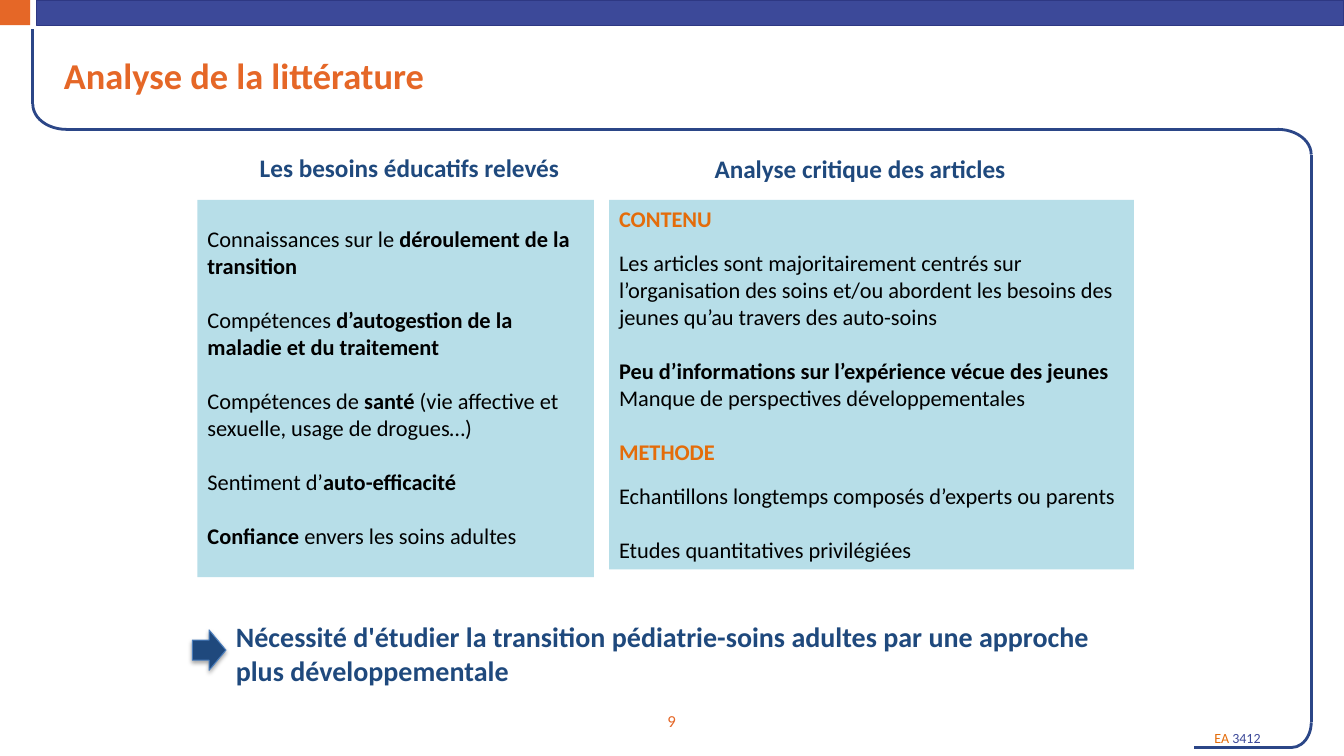
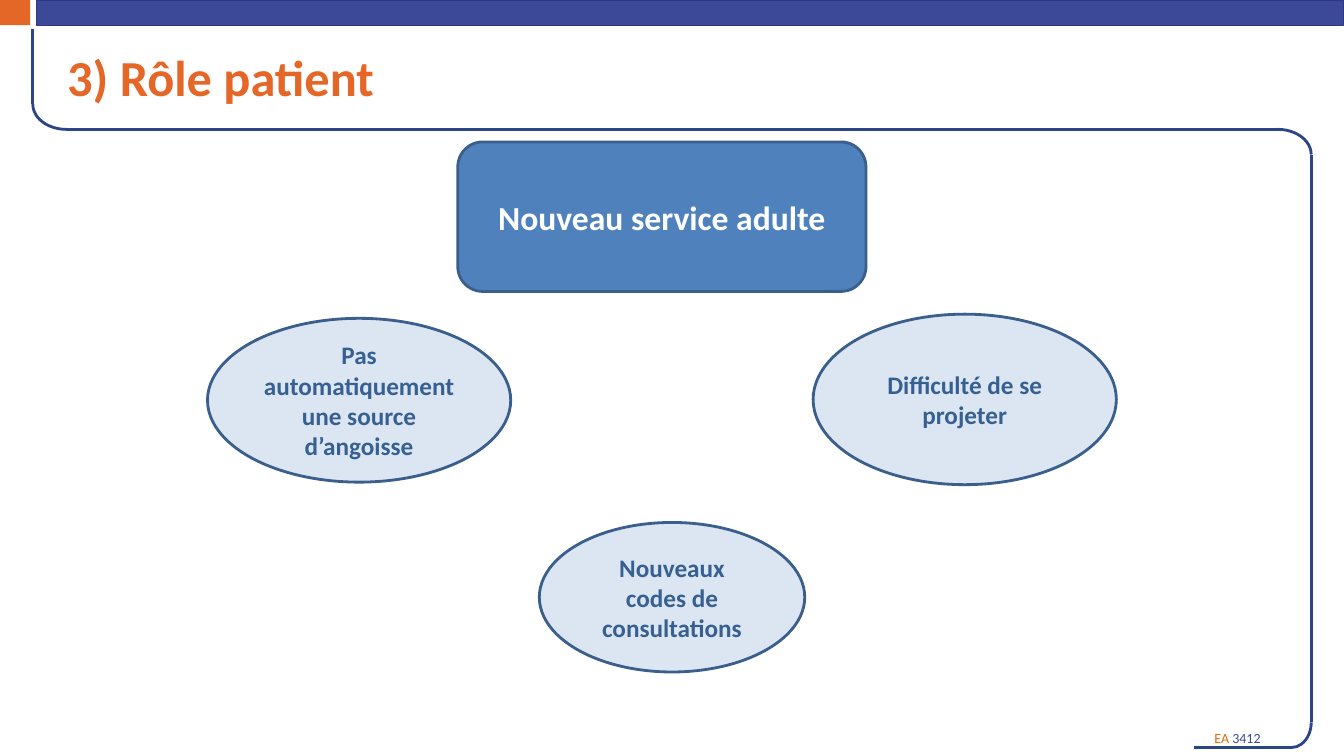
"""Build two slides on the move from child to adult care."""
from dataclasses import dataclass
from typing import Any, NamedTuple

from lxml import etree
from pptx import Presentation
from pptx.dml.color import RGBColor
from pptx.enum.shapes import MSO_CONNECTOR, MSO_SHAPE
from pptx.enum.text import MSO_ANCHOR, MSO_AUTO_SIZE, PP_ALIGN
from pptx.oxml.ns import qn
from pptx.util import Inches, Pt

RECT, ROUND, OVAL = MSO_SHAPE.RECTANGLE, MSO_SHAPE.ROUNDED_RECTANGLE, MSO_SHAPE.OVAL
ARC, ARROW, LINE = MSO_SHAPE.ARC, MSO_SHAPE.RIGHT_ARROW, MSO_CONNECTOR.STRAIGHT
TOP, MIDDLE = MSO_ANCHOR.TOP, MSO_ANCHOR.MIDDLE
LEFT, CENTER = PP_ALIGN.LEFT, PP_ALIGN.CENTER
COLS, ROWS = 160, 90
WIDE, HIGH = Inches(13.33), Inches(7.5)


@dataclass(frozen=True)
class Theme:
    """Colours, type sizes and line widths."""
    font: str = "Calibri"
    orange: str = "E56727"
    amber: str = "E46C0A"
    blue: str = "3C4999"
    edge: str = "2E3883"
    frame: str = "2B4687"
    navy: str = "1F497D"
    panel: str = "B7DEE8"
    pale: str = "DCE6F2"
    steel: str = "4F81BD"
    rim: str = "3A5F8C"
    label: str = "376092"
    glow: str = "4B7EBC"
    black: str = "000000"
    white: str = "FFFFFF"
    tiny: int = 10
    page: int = 12
    body: int = 16
    head: int = 18
    note: int = 20
    lead: int = 24
    title: int = 26
    large: int = 36
    thin: float = 0.75
    thick: float = 2


THEME = Theme()


class Box(NamedTuple):
    """Left, top, width and height in grid cells."""
    x: float
    y: float
    w: float
    h: float


class Run(NamedTuple):
    """A stretch of text with its own look."""
    text: str
    bold: bool | None = None
    color: str | None = None
    edge: str | None = None


class Para(NamedTuple):
    """Runs of one paragraph and the points above it."""
    runs: list[Run]
    gap: float = 0


class Panel(NamedTuple):
    """A headed list on a coloured ground."""
    head: str
    spot: Box
    box: Box
    top: float
    paras: list[Para]


class Bubble(NamedTuple):
    """A labelled shape of the role chart."""
    kind: Any
    box: Box
    text: str
    fill: str = THEME.pale
    color: str = THEME.label
    size: int = THEME.head


GAP, SMALL = 19.5, 12.2
PANELS = [
    Panel("Les besoins éducatifs relevés", Box(26.9, 17.5, 43.7, 4.8),
          Box(23.5, 23.8, 47.2, 44.9), 0.25, [
        Para([Run("Connaissances sur le "), Run("déroulement de la transition", True)]),
        Para([Run("Compétences "),
              Run("d’autogestion de la maladie et du traitement", True)], GAP),
        Para([Run("Compétences de "), Run("santé", True),
              Run(" (vie affective et sexuelle, usage de drogues…)")], GAP),
        Para([Run("Sentiment d’"), Run("auto-efficacité", True)], GAP),
        Para([Run("Confiance", True), Run(" envers les soins adultes")], GAP),
    ]),
    Panel("Analyse critique des articles", Box(78.1, 17.6, 48.6, 4.8),
          Box(72.5, 23.8, 62.5, 44), 0.05, [
        Para([Run("CONTENU", True, THEME.amber)]),
        Para([Run("Les articles sont majoritairement centrés sur l’organisation des "
                  "soins et/ou abordent les besoins des jeunes qu’au travers des "
                  "auto-soins")], SMALL),
        Para([Run("Peu d’informations sur l’expérience vécue des jeunes", True),
              Run(" Manque de perspectives développementales")], GAP),
        Para([Run("METHODE", True, THEME.amber)], GAP),
        Para([Run("Echantillons longtemps composés d’experts ou parents")], SMALL),
        Para([Run("Etudes quantitatives privilégiées")], GAP),
    ]),
]
BUBBLES = [
    Bubble(OVAL, Box(24.7, 37.9, 36.1, 19.5),
           "Pas automatiquement une source d’angoisse"),
    Bubble(ROUND, Box(54.5, 16.9, 48.6, 17.8), "Nouveau service adulte",
           THEME.steel, THEME.white, THEME.lead),
    Bubble(OVAL, Box(96.8, 37.4, 36.1, 20.3), "Difficulté de se projeter"),
    Bubble(OVAL, Box(64.2, 62.2, 31.6, 17.8), "Nouveaux codes de consultations"),
]


def across(col: float) -> int:
    """Turn columns into a length."""
    return round(WIDE * col / COLS)


def down(row: float) -> int:
    """Turn rows into a length."""
    return round(HIGH * row / ROWS)


def place(shape: Any, box: Box) -> None:
    """Move and size a shape on the grid."""
    shape.left, shape.top = across(box.x), down(box.y)
    shape.width, shape.height = across(box.w), down(box.h)


def paint(shape: Any, color: str) -> None:
    """Fill a shape with one colour."""
    shape.fill.solid()
    shape.fill.fore_color.rgb = RGBColor.from_string(color)


def stroke(shape: Any, color: str, width: float) -> None:
    """Set the outline of a shape."""
    shape.line.color.rgb = RGBColor.from_string(color)
    shape.line.width = Pt(width)


def child(node: Any, tag: str, **attrs: str) -> Any:
    """Append an element with its attributes."""
    return etree.SubElement(node, qn(tag), attrs)


def rim_text(run: Any, color: str) -> None:
    """Outline the letters of a run."""
    props = run.font._element
    line = etree.Element(qn("a:ln"), {"w": str(Pt(THEME.thin))})
    child(child(line, "a:solidFill"), "a:srgbClr", val=color)
    props.insert(0, line)


def write(shape: Any, text: str | list[Para], *, size: int, color: str,
          bold: bool = False, align: Any = LEFT, anchor: Any = TOP,
          top: float = 0.05) -> None:
    """Put formatted text into a shape."""
    frame = shape.text_frame
    frame.word_wrap, frame.auto_size = True, MSO_AUTO_SIZE.NONE
    frame.vertical_anchor, frame.margin_top = anchor, Inches(top)
    paras = [Para([Run(text)])] if isinstance(text, str) else text
    for rank, item in enumerate(paras):
        para = frame.add_paragraph() if rank else frame.paragraphs[0]
        para.alignment, para.space_before = align, Pt(item.gap)
        props = para._p.get_or_add_pPr()
        props.set("marL", "0")
        props.set("indent", "0")
        child(props, "a:buNone")
        for part in item.runs:
            run = para.add_run()
            run.text = part.text
            run.font.name, run.font.size = THEME.font, Pt(size)
            run.font.bold = bold if part.bold is None else part.bold
            run.font.color.rgb = RGBColor.from_string(part.color or color)
            if part.edge:
                rim_text(run, part.edge)


def shape_at(slide: Any, kind: Any, box: Box, fill: str | None = None,
             edge: str | None = None, width: float = THEME.thick) -> Any:
    """Draw a flat preset shape."""
    shape = slide.shapes.add_shape(kind, 0, 0, 0, 0)
    place(shape, box)
    shape.shadow.inherit = False
    if fill:
        paint(shape, fill)
    else:
        shape.fill.background()
    if edge:
        stroke(shape, edge, width)
    else:
        shape.line.fill.background()
    return shape


def text_at(slide: Any, box: Box, text: str | list[Para], **form: Any) -> None:
    """Draw a box of text."""
    shape = slide.shapes.add_textbox(0, 0, 0, 0)
    place(shape, box)
    write(shape, text, **form)


def draw_frame(slide: Any) -> None:
    """Draw the bands, rules and footer that all slides share."""
    left, right, rule, foot = 3.9, 156.1, 15.4, 89
    shape_at(slide, RECT, Box(0, 0, 3.6, 3), THEME.orange)
    shape_at(slide, RECT, Box(4.4, 0, 155.6, 3), THEME.blue, THEME.edge, THEME.thin)
    for box, turn in [
        (Box(right - 8, rule, 8, 6), 0),
        (Box(right - 5.35, foot - 5.35, 6, 4.7), 90),
        (Box(left, rule - 6, 8, 6), 180),
    ]:
        shape_at(slide, ARC, box, edge=THEME.frame).rotation = turn
    for x, y, end, low in [
        (left + 4, rule, right - 4, rule),
        (142.2, foot, right - 2.3, foot),
        (right, foot - 3, right, rule + 3),
        (left, rule - 3, left, 3.5),
    ]:
        line = slide.shapes.add_connector(LINE, across(x), down(y), across(end), down(low))
        stroke(line, THEME.frame, THEME.thick)
        child(line._element.spPr, "a:effectLst")
    text_at(slide, Box(143.4, 86.3, 16.4, 3.2),
            [Para([Run("EA ", color=THEME.amber, edge=THEME.amber),
                   Run("3412", edge=THEME.edge)])],
            size=THEME.tiny, color=THEME.blue)


def start(deck: Any, layout: str, title: str, box: Box, size: int) -> Any:
    """Add a framed slide with its title."""
    slide = deck.slides.add_slide(deck.slide_layouts.get_by_name(layout))
    draw_frame(slide)
    place(slide.shapes.title, box)
    write(slide.shapes.title, title, size=size, color=THEME.orange, bold=True,
          anchor=MIDDLE)
    return slide


def draw_review(deck: Any) -> None:
    """Draw the slide on the literature."""
    slide = start(deck, "Comparison", "Analyse de la littérature",
                  Box(6.4, 3.5, 144, 10.9), THEME.title)
    holds = {hold.placeholder_format.idx: hold for hold in slide.placeholders}
    for rank, panel in enumerate(PANELS):
        head, body = holds[2 * rank + 1], holds[2 * rank + 2]
        place(head, panel.spot)
        write(head, panel.head, size=THEME.head, color=THEME.navy, bold=True,
              align=CENTER)
        place(body, panel.box)
        paint(body, THEME.panel)
        write(body, panel.paras, size=THEME.body, color=THEME.black, top=panel.top)
    arrow = shape_at(slide, ARROW, Box(22.9, 75, 4, 4.8), THEME.navy, THEME.glow,
                     THEME.thin)
    cast = child(arrow._element.spPr.find(qn("a:effectLst")), "a:outerShdw",
                 blurRad=str(Pt(3.1)), dist=str(Pt(1.8)), dir="5400000",
                 rotWithShape="0")
    child(child(cast, "a:srgbClr", val=THEME.black), "a:alpha", val="35000")
    text_at(slide, Box(26.9, 73.2, 113.3, 9.2),
            [Para([Run("Nécessité d'étudier la transition pédiatrie-soins adultes "
                       "par une approche")]),
             Para([Run("plus développementale")])],
            size=THEME.note, color=THEME.navy, bold=True)
    text_at(slide, Box(61.3, 83.4, 37.3, 4.8), "9", size=THEME.page,
            color=THEME.orange, align=CENTER, anchor=MIDDLE)


def draw_role(deck: Any) -> None:
    """Draw the slide on the patient's role."""
    slide = start(deck, "Title Only", "3) Rôle patient",
                  Box(6.8, 3.6, 108, 10.9), THEME.large)
    for item in BUBBLES:
        shape = shape_at(slide, item.kind, item.box, item.fill, THEME.rim)
        write(shape, item.text, size=item.size, color=item.color, bold=True,
              align=CENTER, anchor=MIDDLE)


def main() -> None:
    """Build and save the deck."""
    deck = Presentation()
    deck.slide_width, deck.slide_height = WIDE, HIGH
    draw_review(deck)
    draw_role(deck)
    deck.save("out.pptx")


if __name__ == "__main__":
    main()
